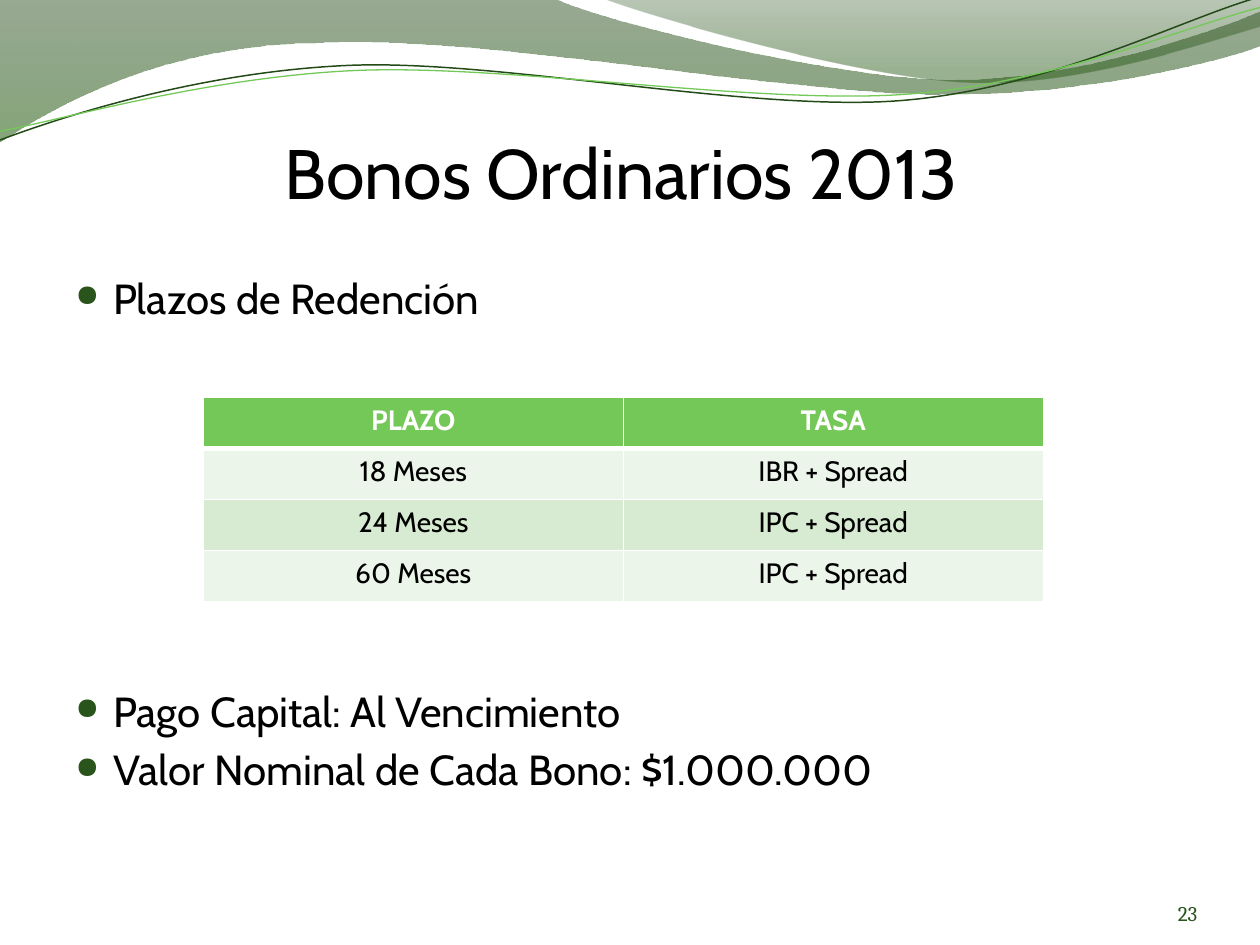
from lxml.etree import SubElement as Sub
from pptx import Presentation
from pptx.dml.color import RGBColor as RGB
from pptx.enum.text import MSO_ANCHOR as Anchor, PP_ALIGN as Align
from pptx.oxml.ns import qn
from pptx.util import Pt

BLACK = RGB(0, 0, 0)
WHITE = RGB(255, 255, 255)
DEEP = RGB(0x29, 0x54, 0x1B)
DARK = RGB(0x24, 0x4A, 0x18)
LEAF = RGB(0x74, 0xC8, 0x58)
PALE = RGB(0xEC, 0xF5, 0xEA)
MINT = RGB(0xD6, 0xEB, 0xD1)
FONT = "Cabin"

# A path is a start point, then lines (one point) and Bezier curves (three).
# A stop is position, colour and opacity in percent.
WAVES = [
    ((0, -0.7), [
        [(317, -0.7)],
        [(343, 12), (478, 45.4), (546, 45.4)],
        [(614, 45.4), (690, 19), (720, 6.5)],
        [(720.7, 26)],
        [(708, 31.7), (626, 54.7), (537, 54)],
        [(448, 54), (275, 20), (185, 24.5)],
        [(93, 25.2), (33, 59.8), (-0.7, 81.4)]],
     [(0, RGB(0x1D, 0x42, 0x10), 45), (1, RGB(0x1E, 0x5A, 0x0A), 55)]),
    ((345, -0.7), [
        [(366.5, 8), (491, 44.6), (553.7, 46.8)],
        [(616, 49.7), (692, 23), (720, 15)],
        [(720, 0)]],
     [(0, RGB(0x1B, 0x44, 0x0E), 30), (0.8, RGB(0x20, 0x54, 0x0E), 45)]),
]
LINES = [
    ((0, 80), [
        [(34.6, 67), (113.8, 41), (199.4, 37.4)],
        [(284.4, 33.8), (427, 64), (513.4, 57.6)],
        [(599.8, 51), (675.4, 10.8), (718.6, -1.4)]], DARK, 0.85),
    ((0, 75), [
        [(33.8, 69), (118, 44), (203.8, 40.3)],
        [(290, 36.7), (430, 59.8), (516.2, 54)],
        [(602, 48.2), (677.5, 15), (720, 4.3)]], LEAF, 0.75),
]
ROWS = [("PLAZO", "TASA"), ("18 Meses", "IBR + Spread"),
        ("24 Meses", "IPC + Spread"), ("60 Meses", "IPC + Spread")]
BULLETS = [("Plazos de Redención", 4.8),
           ("Pago Capital: Al Vencimiento", 207),
           ("Valor Nominal de Cada Bono: $1.000.000", 4.8)]


def add_path(slide, start, parts, close):
    """Draw the points, then join each group of three into one curve."""
    x, y = start
    pen = slide.shapes.build_freeform(Pt(x), Pt(y))
    pts = [(Pt(x), Pt(y)) for part in parts for x, y in part]
    pen.add_line_segments(pts, close=close)
    shape = pen.convert_to_shape()
    shape.shadow.inherit = False
    segs = iter(list(shape._element.iter(qn("a:lnTo"))))
    for part in parts:
        group = [next(segs) for _ in part]
        if len(part) == 3:
            first = group[0]
            first.tag = qn("a:cubicBezTo")
            for seg in group[1:]:
                first.append(seg[0])
                seg.getparent().remove(seg)
    return shape


def add_wave(slide, start, parts, stops):
    shape = add_path(slide, start, parts, True)
    shape.line.fill.background()
    shape.fill.gradient()
    shape.fill.gradient_angle = 270
    for stop, (pos, color, alpha) in zip(shape.fill.gradient_stops, stops):
        stop.position = pos
        stop.color.rgb = color
    marks = shape._element.spPr.iter(qn("a:srgbClr"))
    for mark, (pos, color, alpha) in zip(marks, stops):
        Sub(mark, qn("a:alpha"), val=str(alpha * 1000))


def add_line(slide, start, parts, color, width):
    shape = add_path(slide, start, parts, False)
    shape.fill.background()
    shape.line.color.rgb = color
    shape.line.width = Pt(width)


def add_run(para, text, size, color=BLACK, font=FONT, bold=False):
    run = para.add_run()
    run.text = text
    run.font.size = Pt(size)
    run.font.name = font
    run.font.bold = bold
    run.font.color.rgb = color


def add_box(slide, x, y, w, h, anchor=Anchor.TOP, pads=(7.2, 3.6, 7.2, 3.6)):
    box = slide.shapes.add_textbox(Pt(x), Pt(y), Pt(w), Pt(h))
    frame = box.text_frame
    frame.word_wrap = True
    frame.vertical_anchor = anchor
    (frame.margin_left, frame.margin_top,
     frame.margin_right, frame.margin_bottom) = map(Pt, pads)
    return frame


def add_label(slide, box, pads, align, *style):
    para = add_box(slide, *box, Anchor.BOTTOM, pads).paragraphs[0]
    para.alignment = align
    add_run(para, *style)


def set_bullet(para):
    props = para._p.get_or_add_pPr()
    props.set("marL", str(Pt(21.6)))
    props.set("indent", str(Pt(-21.6)))
    Sub(Sub(props, qn("a:buClr")), qn("a:srgbClr"), val=str(DEEP))
    Sub(props, qn("a:buSzPct"), val="72000")
    Sub(props, qn("a:buChar"), char="●")


def add_list(slide):
    frame = add_box(slide, 36, 152.1, 648, 345.6)
    for i, (text, gap) in enumerate(BULLETS):
        para = frame.add_paragraph() if i else frame.paragraphs[0]
        para.space_before = Pt(gap)
        set_bullet(para)
        add_run(para, text, 24)


def set_edges(cell, row):
    props = cell._tc.get_or_add_tcPr()
    wide = {0: "lnB", 1: "lnT"}.get(row)
    for side in ("lnL", "lnR", "lnT", "lnB"):
        width = Pt(3 if side == wide else 1)
        edge = Sub(props, qn("a:" + side), w=str(width))
        Sub(Sub(edge, qn("a:solidFill")), qn("a:srgbClr"), val=str(WHITE))


def add_rates(slide):
    table = slide.shapes.add_table(
        len(ROWS), 2, Pt(116.2), Pt(227), Pt(480), Pt(116.8)).table
    for r, texts in enumerate(ROWS):
        table.rows[r].height = Pt(29.2)
        head = r == 0
        for c, text in enumerate(texts):
            cell = table.cell(r, c)
            set_edges(cell, r)
            cell.fill.solid()
            cell.fill.fore_color.rgb = LEAF if head else (MINT, PALE)[r % 2]
            para = cell.text_frame.paragraphs[0]
            para.alignment = Align.CENTER
            add_run(para, text, 16, WHITE if head else BLACK, bold=head)


def main():
    deck = Presentation()
    deck.slide_width, deck.slide_height = Pt(720), Pt(540)
    slide = deck.slides.add_slide(deck.slide_layouts[6])
    for wave in WAVES:
        add_wave(slide, *wave)
    for line in LINES:
        add_line(slide, *line)
    add_label(slide, (31, 32, 648, 90), (0, 3.6, 0, 0), Align.CENTER,
              "Bonos Ordinarios 2013", 40)
    add_list(slide)
    add_label(slide, (624.2, 500.4, 60, 28.8), (0, 0, 0, 0), Align.RIGHT,
              "23", 12, DEEP, "Cambria")
    add_rates(slide)
    deck.save("out.pptx")


if __name__ == "__main__":
    main()
